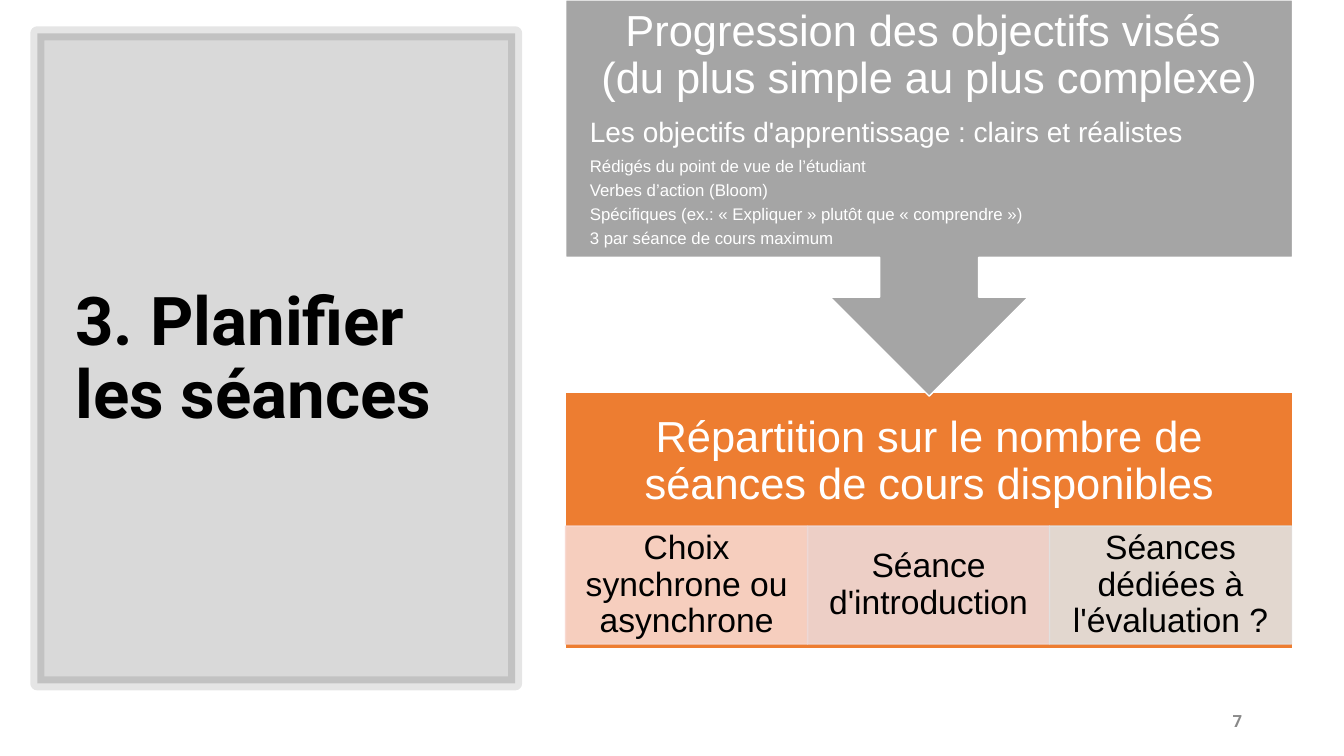
"""Build the slide on planning course sessions."""
from lxml import etree
from pptx import Presentation
from pptx.dml.color import RGBColor
from pptx.enum.shapes import MSO_SHAPE
from pptx.enum.text import MSO_ANCHOR, PP_ALIGN
from pptx.oxml.ns import qn
from pptx.util import Inches, Pt

RECT, CALLOUT = MSO_SHAPE.RECTANGLE, MSO_SHAPE.UP_ARROW_CALLOUT
MIDDLE = MSO_ANCHOR.MIDDLE
LEFT, CENTER, RIGHT = PP_ALIGN.LEFT, PP_ALIGN.CENTER, PP_ALIGN.RIGHT
BLACK = RGBColor(0x00, 0x00, 0x00)
WHITE = RGBColor(0xFF, 0xFF, 0xFF)
GRAY = RGBColor(0xA5, 0xA5, 0xA5)
NUMBER_GRAY = RGBColor(0x89, 0x89, 0x89)
ORANGE = RGBColor(0xED, 0x7D, 0x31)
PEACH = RGBColor(0xF8, 0xD7, 0xCE)
ROSE = RGBColor(0xED, 0xD9, 0xD7)
PALE_GRAY = RGBColor(0xE1, 0xE1, 0xE1)

DIAGRAM_LEFT, DIAGRAM_WIDTH = 5.61, 7.21
CELL_WIDTH = 2.4


def add_box(kind, box, fill, line, width, fill_alpha=100, line_alpha=100):
    """Add a filled, outlined shape with opacities in percent."""
    s = slide.shapes.add_shape(kind, *map(Inches, box))
    s.shadow.inherit = False
    s.line.width = Pt(width)
    s.fill.solid()
    s.line.fill.solid()
    for paint, color, alpha in ((s.fill, fill, fill_alpha), (s.line.fill, line, line_alpha)):
        paint.fore_color.rgb = color
        if alpha < 100:
            srgb = paint._xPr.find(qn("a:solidFill")).find(qn("a:srgbClr"))
            etree.SubElement(srgb, qn("a:alpha"), val=str(alpha * 1000))
    return s


def write(s, paragraphs, font, color, margins=(0.1, 0.05), bold=False, after=None):
    """Fill a shape with (text, size, alignment) paragraphs."""
    tf = s.text_frame
    tf.word_wrap = True
    tf.vertical_anchor = MIDDLE
    tf.margin_left = tf.margin_right = Inches(margins[0])
    tf.margin_top = tf.margin_bottom = Inches(margins[1])
    for i, (text, size, align) in enumerate(paragraphs):
        p = tf.add_paragraph() if i else tf.paragraphs[0]
        p.text = text
        p.alignment = align
        p.line_spacing = 0.9
        if after:
            spacing = etree.SubElement(p._p.get_or_add_pPr(), qn("a:spcAft"))
            etree.SubElement(spacing, qn("a:spcPct"), val=str(after * 1000))
        for r in p.runs:
            r.font.name = font
            r.font.size = Pt(size)
            r.font.bold = bold
            r.font.color.rgb = color


prs = Presentation()
prs.slide_width, prs.slide_height = Inches(13.33), Inches(7.5)
slide = prs.slides.add_slide(prs.slide_layouts[6])

add_box(RECT, (0.37, 0.33, 4.74, 6.45), BLACK, BLACK, 10, 15, 10)
title = slide.shapes.add_textbox(*map(Inches, (0.65, 0.7, 4.16, 5.75)))
write(title, [("3. Planifier les séances", 48, LEFT)], "Roboto", BLACK, bold=True)

number = slide.shapes.add_textbox(*map(Inches, (9.42, 6.95, 3, 0.4)))
write(number, [("7", 12, RIGHT)], "Roboto", NUMBER_GRAY, bold=True)
number.text_frame.paragraphs[0].line_spacing = 1.0
number.text_frame.paragraphs[0].space_after = Pt(6)

add_box(RECT, (DIAGRAM_LEFT, 3.89, DIAGRAM_WIDTH, 2.55), ORANGE, WHITE, 1)
sessions = slide.shapes.add_textbox(*map(Inches, (DIAGRAM_LEFT, 3.89, DIAGRAM_WIDTH, 1.38)))
write(sessions, [("Répartition sur le nombre de séances de cours disponibles", 31, CENTER)],
      "Arial", WHITE, (0.24, 0.24), after=35)

choices = [
    ("Choix synchrone ou asynchrone", PEACH),
    ("Séance d'introduction", ROSE),
    ("Séances dédiées à l'évaluation ?", PALE_GRAY),
]
for i, (text, color) in enumerate(choices):
    cell = add_box(RECT, (DIAGRAM_LEFT + i * CELL_WIDTH, 5.22, CELL_WIDTH, 1.17),
                   color, color, 1, 90, 90)
    write(cell, [(text, 24, CENTER)], "Arial", BLACK, (0.19, 0.03), after=35)

callout = add_box(CALLOUT, (DIAGRAM_LEFT, 0, DIAGRAM_WIDTH, 3.93), GRAY, WHITE, 1)
callout.rotation = 180
objectives = slide.shapes.add_textbox(*map(Inches, (DIAGRAM_LEFT, 0, DIAGRAM_WIDTH, 2.55)))
write(objectives, [
    ("Progression des objectifs visés \v(du plus simple au plus complexe)", 31, CENTER),
    ("Les objectifs d'apprentissage : clairs et réalistes", 20, LEFT),
    ("Rédigés du point de vue de l’étudiant", 12, LEFT),
    ("Verbes d’action (Bloom)", 12, LEFT),
    ("Spécifiques (ex.: « Expliquer » plutôt que « comprendre »)", 12, LEFT),
    ("3 par séance de cours maximum", 12, LEFT),
], "Arial", WHITE, (0.24, 0.24), after=35)

prs.save("out.pptx")
